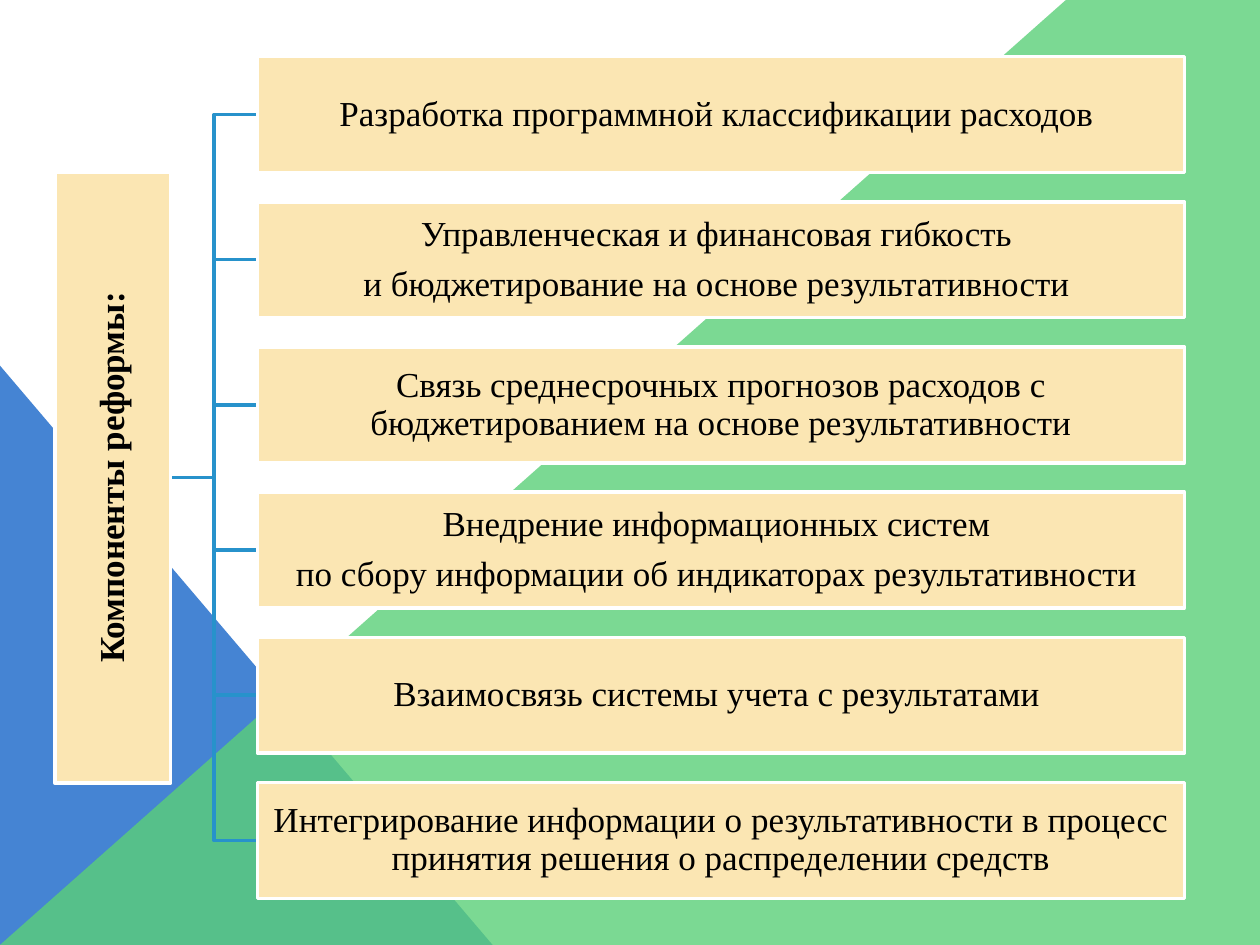
from dataclasses import dataclass

from lxml import etree
from pptx import Presentation
from pptx.dml.color import RGBColor
from pptx.enum.shapes import MSO_CONNECTOR, MSO_SHAPE
from pptx.enum.text import MSO_ANCHOR, PP_ALIGN
from pptx.oxml.ns import qn
from pptx.util import Pt

RECT = MSO_SHAPE.RECTANGLE
RIGHT_TRIANGLE = MSO_SHAPE.RIGHT_TRIANGLE
ELBOW = MSO_CONNECTOR.ELBOW
MIDDLE = MSO_ANCHOR.MIDDLE
CENTER = PP_ALIGN.CENTER

WIDTH, HEIGHT = 720, 540
ROOT = "Компоненты реформы:"
COMPONENTS = [
    "Разработка программной классификации расходов ",
    "Управленческая и финансовая гибкость \n"
    "и бюджетирование на основе результативности ",
    "Связь среднесрочных прогнозов расходов с "
    "бюджетированием на основе результативности",
    "Внедрение информационных систем \n"
    "по сбору информации об индикаторах результативности ",
    "Взаимосвязь системы учета с результатами ",
    "Интегрирование информации о результативности в процесс "
    "принятия решения о распределении средств",
]


@dataclass(frozen=True)
class Theme:
    """Colours, font and sizes of the slide."""
    blue: RGBColor = RGBColor(0x45, 0x84, 0xD3)
    green: RGBColor = RGBColor(0x5B, 0xD0, 0x78)
    cream: RGBColor = RGBColor(0xFB, 0xE6, 0xB3)
    white: RGBColor = RGBColor(0xFF, 0xFF, 0xFF)
    black: RGBColor = RGBColor(0x00, 0x00, 0x00)
    branch: RGBColor = RGBColor(0x27, 0x92, 0xCB)
    font: str = "Times New Roman"
    size: int = 20
    line: int = 2
    space_after: int = 7
    inset: float = 0.72
    green_alpha: int = 80


THEME = Theme()


def paint(sp, color):
    """Give a shape a plain fill with no line or shadow."""
    sp.shadow.inherit = False
    sp.fill.solid()
    sp.fill.fore_color.rgb = color
    sp.line.fill.background()


def add_background(slide, x, y, w, h):
    """Draw the blue corner and the translucent green diagonal in a box."""
    tri_w, tri_h = 0.391 * w, 0.613 * h
    corner = slide.shapes.add_shape(
        RIGHT_TRIANGLE, Pt(x), Pt(y + h - tri_h), Pt(tri_w), Pt(tri_h))
    paint(corner, THEME.blue)
    fb = slide.shapes.build_freeform(Pt(x), Pt(y + h))
    fb.add_line_segments([
        (Pt(x + 0.846 * w), Pt(y)), (Pt(x + w), Pt(y)),
        (Pt(x + w), Pt(y + h))], close=True)
    diagonal = fb.convert_to_shape()
    paint(diagonal, THEME.green)
    color = diagonal.fill._xPr.find(qn("a:solidFill"))[0]
    etree.SubElement(color, qn("a:alpha"), val=str(THEME.green_alpha * 1000))


def add_node(slide, text, x, y, w, h, bold=False):
    """Add a cream box with centred text and return it."""
    sp = slide.shapes.add_shape(RECT, Pt(x), Pt(y), Pt(w), Pt(h))
    paint(sp, THEME.cream)
    sp.line.color.rgb = THEME.white
    sp.line.width = Pt(THEME.line)
    tf = sp.text_frame
    tf.word_wrap = True
    tf.vertical_anchor = MIDDLE
    tf.margin_left = tf.margin_right = Pt(THEME.inset)
    tf.margin_top = tf.margin_bottom = Pt(THEME.inset)
    tf.text = text
    for p in tf.paragraphs:
        p.alignment = CENTER
        p.line_spacing = 0.9
        p.space_after = Pt(THEME.space_after)
        for r in p.runs:
            r.font.name = THEME.font
            r.font.size = Pt(THEME.size)
            r.font.bold = bold
            r.font.color.rgb = THEME.black
    return sp


def add_branch(slide, x1, y1, x2, y2):
    """Add an elbow line from the root to a component."""
    cx = slide.shapes.add_connector(ELBOW, Pt(x1), Pt(y1), Pt(x2), Pt(y2))
    cx.line.color.rgb = THEME.branch
    cx.line.width = Pt(THEME.line)
    etree.SubElement(cx._element.spPr, qn("a:effectLst"))


def add_hierarchy(slide, x, y, w, h):
    """Lay out the upright root, its branches and the components in a box."""
    node_h, root_len, gap = 66.24, 349.2, 49.56
    step = (h - node_h) / (len(COMPONENTS) - 1)
    node_x = x + node_h + gap
    mid_y = y + h / 2
    tops = [y + i * step for i in range(len(COMPONENTS))]
    for top in reversed(tops):
        add_branch(slide, x + node_h, mid_y, node_x, top + node_h / 2)
    root = add_node(slide, ROOT, x + (node_h - root_len) / 2,
                    mid_y - node_h / 2, root_len, node_h, bold=True)
    root.rotation = 270
    for text, top in zip(COMPONENTS, tops):
        add_node(slide, text, node_x, top, x + w - node_x, node_h)


def main():
    """Build and save the slide."""
    prs = Presentation()
    prs.slide_width, prs.slide_height = Pt(WIDTH), Pt(HEIGHT)
    slide = prs.slides.add_slide(prs.slide_layouts[6])
    add_background(slide, 0, 0, WIDTH, HEIGHT)
    add_hierarchy(slide, 31.3, 32.4, 645.5, 480.95)
    prs.save("out.pptx")


if __name__ == "__main__":
    main()
